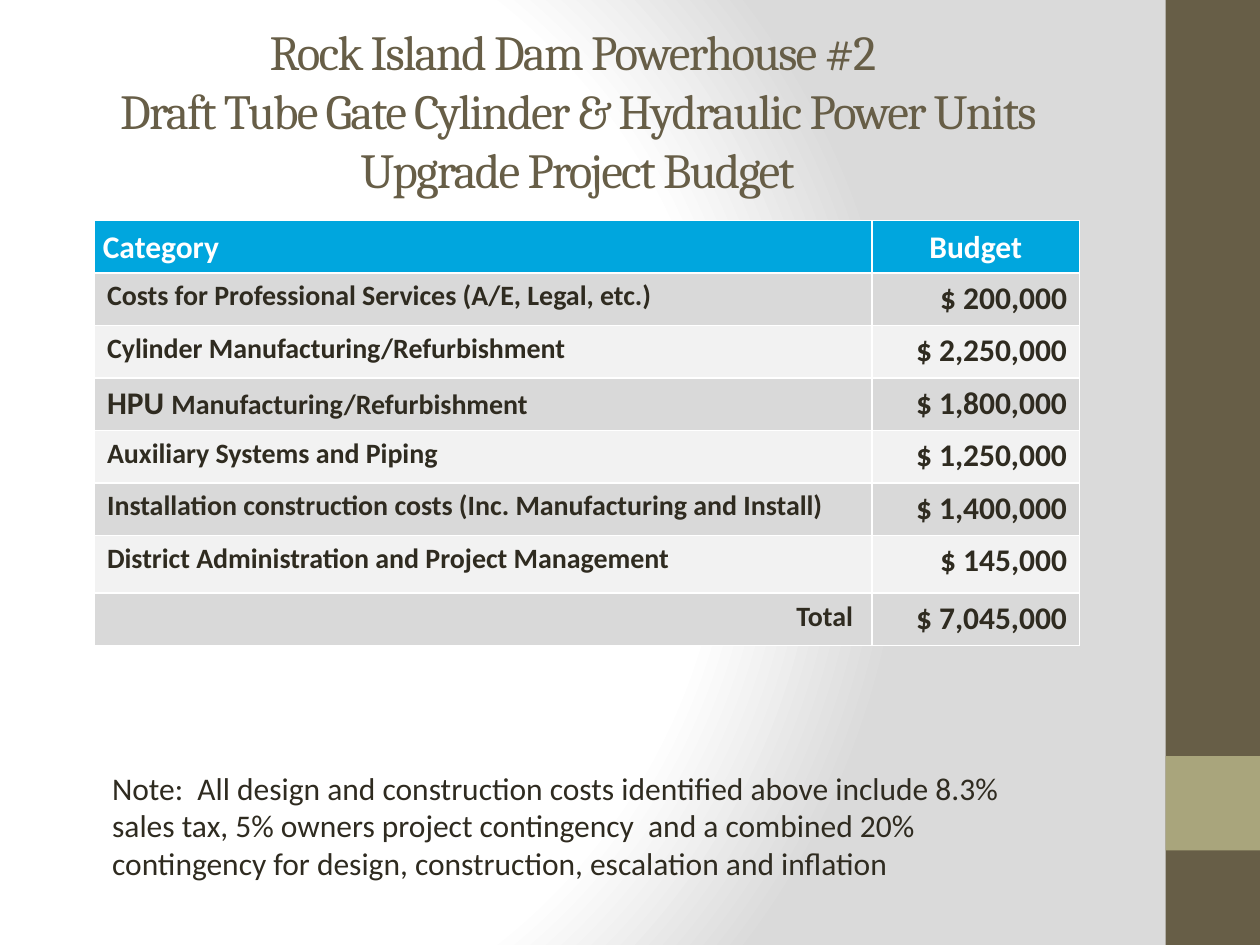
from pptx import Presentation
from pptx.dml.color import RGBColor
from pptx.enum.shapes import MSO_SHAPE
from pptx.enum.text import MSO_ANCHOR, MSO_AUTO_SIZE, PP_ALIGN
from pptx.oxml import parse_xml
from pptx.oxml.ns import nsdecls, qn
from pptx.util import Pt

RECT = MSO_SHAPE.RECTANGLE
TOP, MIDDLE = MSO_ANCHOR.TOP, MSO_ANCHOR.MIDDLE
LEFT, CENTER, RIGHT = PP_ALIGN.LEFT, PP_ALIGN.CENTER, PP_ALIGN.RIGHT
FIXED = MSO_AUTO_SIZE.NONE
GROW = MSO_AUTO_SIZE.SHAPE_TO_FIT_TEXT

COLORS = {
    "white": "FFFFFF", "mist": "DADADA", "brown": "675E47", "olive": "A9A57C",
    "header": "00A6DE", "dark_row": "D9D9D9", "light_row": "F2F2F2",
    "text": "2F2B20",
}

TITLE = ("Rock Island Dam Powerhouse #2 \v"
         "Draft Tube Gate Cylinder & Hydraulic Power Units Upgrade Project Budget")
NOTE = ("Note:  All design and construction costs identified above include 8.3% "
        "sales tax, 5% owners project contingency  and a combined 20% "
        "contingency for design, construction, escalation and inflation")

# Each label is a list of (text, size) runs
BUDGET = [
    ([("Costs for Professional Services (A/E, Legal, etc.)", 16)], "$ 200,000"),
    ([("Cylinder Manufacturing/Refurbishment", 16)], "$ 2,250,000"),
    ([("HPU ", 18), ("Manufacturing/Refurbishment", 16)], "$ 1,800,000"),
    ([("Auxiliary Systems and Piping", 16)], "$ 1,250,000"),
    ([("Installation construction costs (Inc. Manufacturing and Install)", 16)],
     "$ 1,400,000"),
    ([("District Administration and Project Management", 16)], "$ 145,000"),
    ([("Total ", 16)], "$ 7,045,000"),
]
COL_WIDTHS = (444.2, 118.8)
ROW_HEIGHTS = [30] * 6 + [33, 30]


def rgb(name):
    return RGBColor.from_string(COLORS[name])


def set_attrs(obj, formats):
    for name, value in formats.items():
        setattr(obj, name, value)


def add_runs(p, runs, color, align=LEFT, font="Calibri", bold=False):
    p.alignment = align
    for text, size in runs:
        p.add_run().text = text
    for r, (text, size) in zip(p.runs, runs):
        set_attrs(r.font, {"name": font, "size": Pt(size), "bold": bold})
        r.font.color.rgb = rgb(color)


def set_background(s):
    stops = "".join(
        f'<a:gs pos="{pos * 1000}"><a:srgbClr val="{COLORS[name]}"/></a:gs>'
        for pos, name in ((0, "white"), (75, "white"), (100, "mist")))
    bg = parse_xml(
        f'<p:bg {nsdecls("p", "a")}><p:bgPr><a:gradFill rotWithShape="1">'
        f'<a:gsLst>{stops}</a:gsLst><a:path path="circle">'
        '<a:fillToRect l="20000" t="50000" r="100000" b="50000"/></a:path>'
        '</a:gradFill><a:effectLst/></p:bgPr></p:bg>')
    s.element.find(qn("p:cSld")).insert(0, bg)


def add_bar(s, top, height, color):
    sp = s.shapes.add_shape(RECT, Pt(666), Pt(top), Pt(54), Pt(height))
    sp.shadow.inherit = False
    sp.fill.solid()
    sp.fill.fore_color.rgb = rgb(color)
    sp.line.fill.background()


def set_title(s):
    sp = s.shapes.title
    set_attrs(sp, {"left": Pt(30), "top": Pt(18),
                   "width": Pt(600), "height": Pt(90)})
    tf = sp.text_frame
    set_attrs(tf, {"word_wrap": True, "auto_size": FIXED,
                   "vertical_anchor": MIDDLE})
    p = tf.paragraphs[0]
    p.text = TITLE
    p.alignment = CENTER
    for r in p.runs:
        set_attrs(r.font, {"name": "Cambria", "size": Pt(28)})
        r.font.color.rgb = rgb("brown")
        r.font._element.set("spc", "-100")


def fill_cell(cell, runs, fill, color, align, formats):
    set_attrs(cell, formats)
    cell.fill.solid()
    cell.fill.fore_color.rgb = rgb(fill)
    add_runs(cell.text_frame.paragraphs[0], runs, color, align, bold=True)
    # Thin white border on all four sides, placed ahead of the fill
    tcPr = cell._tc.get_or_add_tcPr()
    for i, side in enumerate(("lnL", "lnR", "lnT", "lnB")):
        tcPr.insert(i, parse_xml(
            f'<a:{side} {nsdecls("a")} w="12700"><a:solidFill>'
            f'<a:srgbClr val="{COLORS["white"]}"/></a:solidFill></a:{side}>'))


def add_budget_table(s):
    table = s.shapes.add_table(
        len(ROW_HEIGHTS), len(COL_WIDTHS), Pt(54), Pt(126),
        Pt(sum(COL_WIDTHS)), Pt(sum(ROW_HEIGHTS))).table
    set_attrs(table, {"first_row": False, "horz_banding": False})
    for col, width in zip(table.columns, COL_WIDTHS):
        col.width = Pt(width)
    for row, height in zip(table.rows, ROW_HEIGHTS):
        row.height = Pt(height)

    # Header row
    tight = {"vertical_anchor": MIDDLE, "margin_left": Pt(0.72),
             "margin_right": Pt(0.72), "margin_top": Pt(0.72),
             "margin_bottom": Pt(0)}
    for c, (text, align) in enumerate(((" Category", LEFT), ("Budget", CENTER))):
        fill_cell(table.cell(0, c), [(text, 18)], "header", "white", align, tight)

    # Budget rows, the last one being the total
    for i, (label, amount) in enumerate(BUDGET, 1):
        fill = "dark_row" if i % 2 else "light_row"
        align = RIGHT if i == len(BUDGET) else LEFT
        body = {"vertical_anchor": TOP}
        fill_cell(table.cell(i, 0), label, fill, "text", align, body)
        fill_cell(table.cell(i, 1), [(amount, 18)], fill, "text", RIGHT, body)


def add_note(s):
    tf = s.shapes.add_textbox(Pt(57), Pt(435.6), Pt(557.3), Pt(72.7)).text_frame
    set_attrs(tf, {"word_wrap": True, "auto_size": GROW})
    add_runs(tf.paragraphs[0], [(NOTE, 18)], "text")


def main():
    prs = Presentation()
    set_attrs(prs, {"slide_width": Pt(720), "slide_height": Pt(540)})
    s = prs.slides.add_slide(prs.slide_layouts[5])
    set_background(s)
    # Side band with its accent block
    add_bar(s, 0, 540, "brown")
    add_bar(s, 432, 54, "olive")
    set_title(s)
    add_budget_table(s)
    add_note(s)
    prs.save("out.pptx")


if __name__ == "__main__":
    main()
